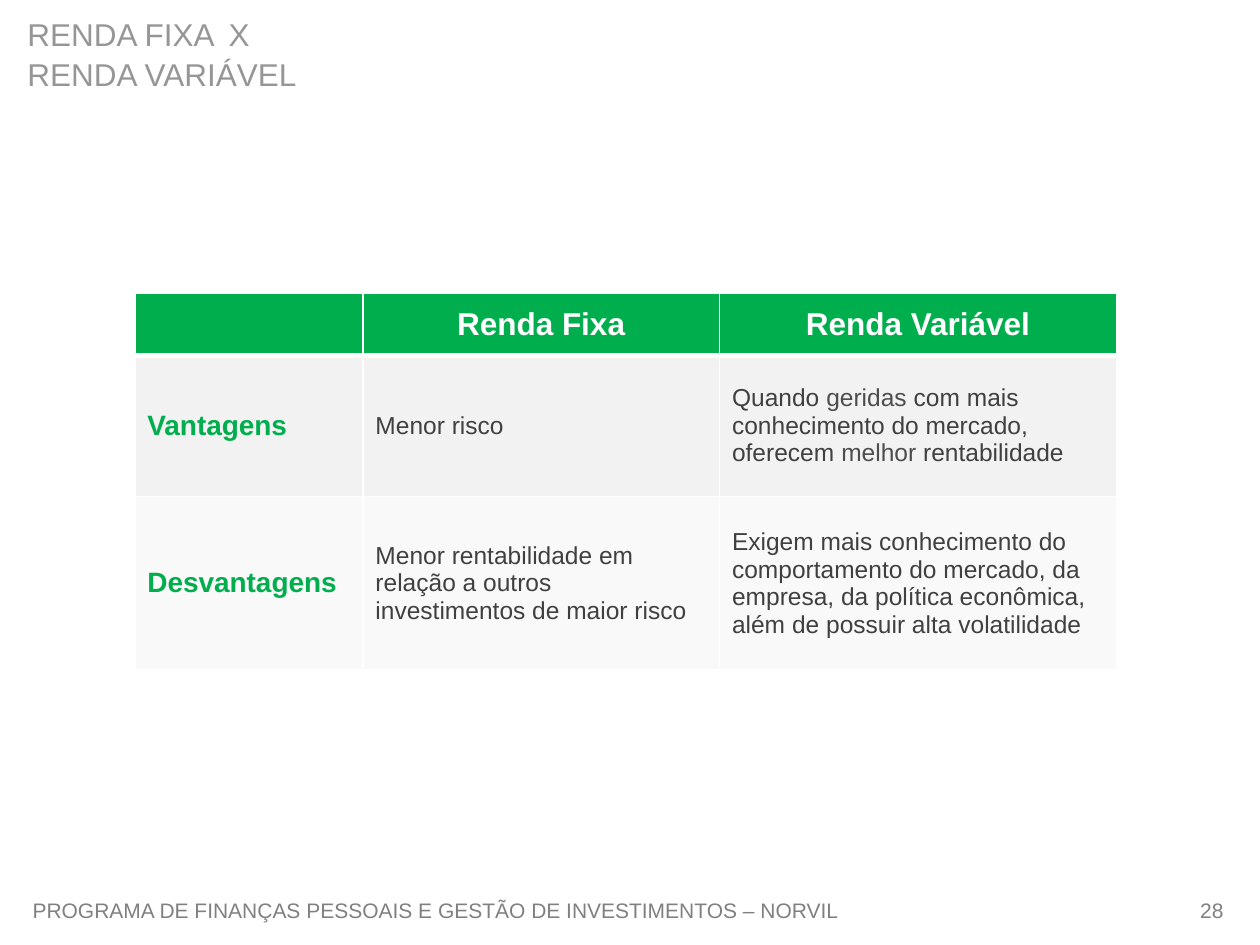
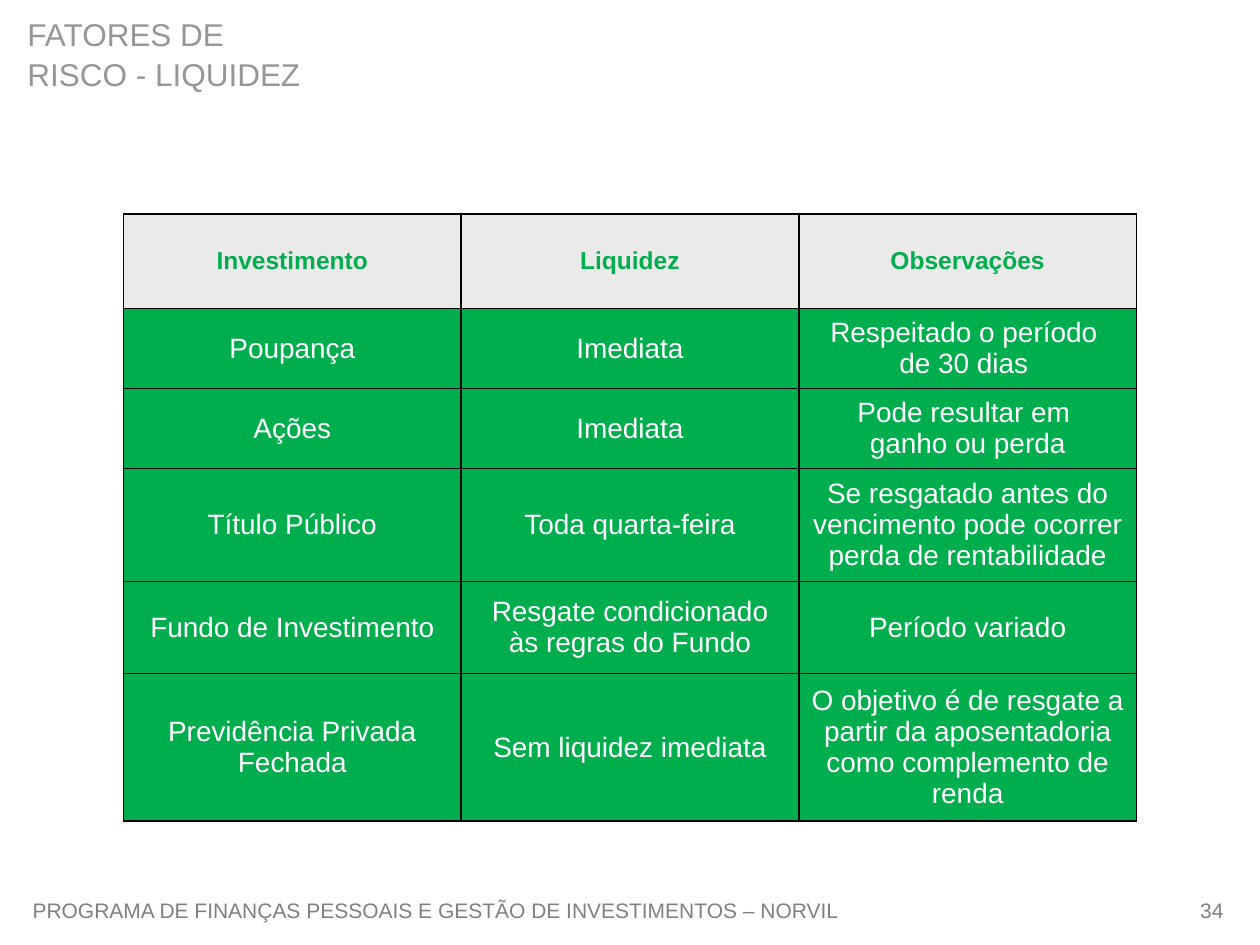
from copy import deepcopy
from lxml.etree import SubElement as Sub
from pptx import Presentation
from pptx.dml.color import RGBColor as RGB
from pptx.enum.text import MSO_ANCHOR as Anchor, PP_ALIGN as Align
from pptx.oxml.ns import qn
from pptx.util import Inches, Pt

# Shared look
FONT = "Arial"
GREEN, WHITE, BLACK = "00AE4D", "FFFFFF", "000000"
TITLE, FOOT, BODY, MARK = "969696", "808080", "404040", "4D4D4D"
FOOTER = "PROGRAMA DE FINANÇAS PESSOAIS E GESTÃO DE INVESTIMENTOS – NORVIL"

# Content: text between bars is marked, a line feed breaks the line
VERSUS = [
    ("", "Renda Fixa", "Renda Variável"),
    ("Vantagens", "Menor risco",
     "Quando |geridas| com mais conhecimento do mercado, "
     "oferecem |melhor| rentabilidade"),
    ("Desvantagens",
     "Menor rentabilidade em relação a outros investimentos de maior risco",
     "Exigem mais conhecimento do comportamento do mercado, da empresa, "
     "da política econômica, além de possuir alta volatilidade"),
]
LIQUID = [
    ("Investimento", "Liquidez", "Observações"),
    ("Poupança", "Imediata", "Respeitado o período \nde 30 dias "),
    ("Ações", "Imediata", "Pode resultar em \nganho ou perda"),
    ("Título Público", "Toda quarta-feira",
     "Se resgatado antes do vencimento pode ocorrer perda de rentabilidade"),
    ("Fundo de Investimento", "Resgate condicionado às regras do Fundo",
     "Período variado"),
    ("Previdência Privada Fechada", "Sem liquidez imediata",
     "O objetivo é de resgate a partir da aposentadoria "
     "como complemento de renda"),
]


def color(code):
    return RGB.from_string(code)


def write(frame, text, size, tint, bold=False, align=Align.LEFT):
    """Fill a frame with one paragraph and return its marked runs."""
    para, marked = frame.paragraphs[0], []
    para.alignment = align
    for num, line in enumerate(text.split("\n")):
        if num:
            para.add_line_break()
        for pos, part in enumerate(line.split("|")):
            run = para.add_run()
            run.text = part
            font = run.font
            font.name, font.size, font.bold = FONT, Pt(size), bold
            font.color.rgb = color(tint)
            if pos % 2:
                marked.append(run)
    # Line breaks take the size of the text around them
    for brk in para._p.findall(qn("a:br")):
        brk.append(deepcopy(para.runs[0]._r.rPr))
    return marked


def add_text(slide, box, text, size, tint, align=Align.LEFT, inset=True):
    frame = slide.shapes.add_textbox(*map(Inches, box)).text_frame
    frame.word_wrap = True
    frame.vertical_anchor = Anchor.MIDDLE
    if not inset:
        frame.margin_left = frame.margin_right = 0
        frame.margin_top = frame.margin_bottom = 0
    return frame, write(frame, text, size, tint, align=align)


def add_page(deck, title, page):
    slide = deck.slides.add_slide(deck.slide_layouts[6])
    add_text(slide, (0.16, 6.95, 6.65, 0.55), FOOTER, 12, FOOT)
    add_text(slide, (9.44, 7.12, 0.27, 0.2), str(page), 12, FOOT,
             Align.RIGHT, inset=False)
    frame, marked = add_text(slide, (0.12, 0, 3.37, 0.84), title, 18, TITLE)
    frame.paragraphs[0].line_spacing = 1.05
    for run in marked:
        run._r.get_or_add_rPr().set("spc", "300")
    return slide


def add_edges(cell, tint, top=1, bottom=1):
    props = cell._tc.get_or_add_tcPr()
    widths = {"L": 1, "R": 1, "T": top, "B": bottom}
    for pos, (side, width) in enumerate(widths.items()):
        line = Sub(props, qn("a:ln" + side), w=str(Pt(width)))
        Sub(Sub(line, qn("a:solidFill")), qn("a:srgbClr"), val=tint)
        props.insert(pos, line)


def add_grid(slide, left, top, cols, rows, data, look, edge, rule=1):
    """look(row, col) gives fill, size, tint, bold and alignment."""
    table = slide.shapes.add_table(
        len(rows), len(cols), Inches(left), Inches(top),
        Inches(sum(cols)), Inches(sum(rows))).table
    table.horz_banding = False
    for col, width in zip(table.columns, cols):
        col.width = Inches(width)
    for row, height in zip(table.rows, rows):
        row.height = Inches(height)
    for r, texts in enumerate(data):
        for c, text in enumerate(texts):
            cell = table.cell(r, c)
            fill, *style = look(r, c)
            cell.fill.solid()
            cell.fill.fore_color.rgb = color(fill)
            cell.vertical_anchor = Anchor.MIDDLE
            add_edges(cell, edge, top=rule if r == 1 else 1,
                      bottom=rule if r == 0 else 1)
            if text:
                for run in write(cell.text_frame, text, *style):
                    run.font.color.rgb = color(MARK)


def versus_look(row, col):
    if row == 0:
        return GREEN, 18, WHITE, True, Align.CENTER
    fill = ("F2F2F2", "F9F9F9")[row - 1]
    if col == 0:
        return fill, 16, GREEN, True, Align.LEFT
    return fill, 14, BODY, False, Align.LEFT


def liquid_look(row, col):
    if row == 0:
        return "EAEAEA", 14, GREEN, True, Align.CENTER
    return GREEN, 16, WHITE, False, Align.CENTER


def main():
    deck = Presentation()
    deck.slide_width, deck.slide_height = Inches(10), Inches(7.5)

    # Fixed against variable income
    slide = add_page(deck, "RENDA FIXA| X|\nRENDA VARIÁVEL", 28)
    add_grid(slide, 1.07, 2.33, (1.81, 2.83, 3.15), (0.49, 1.12, 1.38),
             VERSUS, versus_look, WHITE, rule=3)

    # Liquidity of each investment
    slide = add_page(deck, "FATORES DE \nRISCO - LIQUIDEZ", 34)
    add_grid(slide, 0.98, 1.7, [2.68] * 3, (0.75, 0.63, 0.63, 0.9, 0.73, 1.17),
             LIQUID, liquid_look, BLACK)

    deck.save("out.pptx")


if __name__ == "__main__":
    main()
